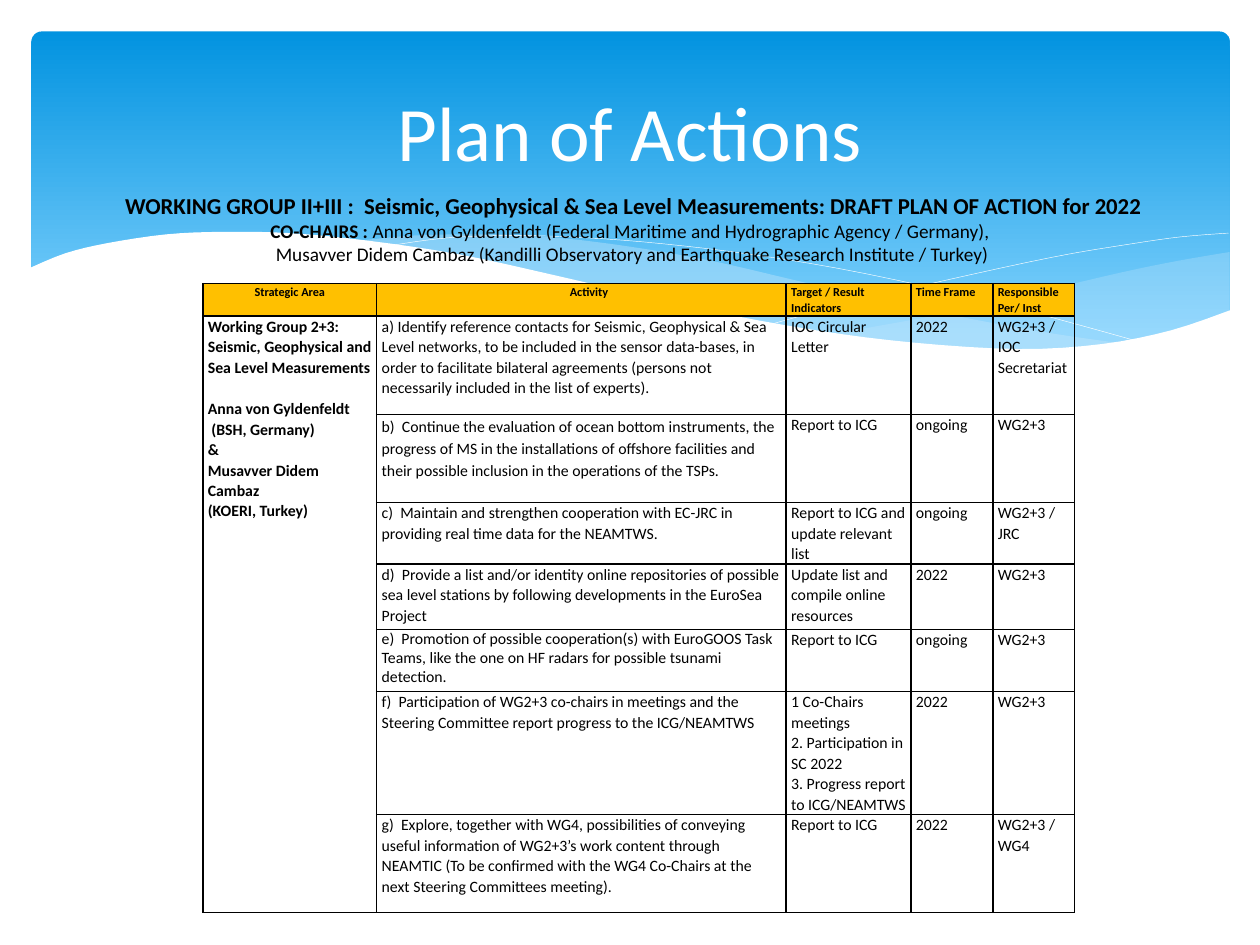
from pptx import Presentation
from pptx.dml.color import RGBColor
from pptx.enum.shapes import MSO_SHAPE
from pptx.enum.text import MSO_ANCHOR, PP_ALIGN
from pptx.oxml.ns import qn
from pptx.util import Inches, Pt
from lxml.etree import SubElement

INK = {"sky": "0293E0", "pale": "83D3FE", "mist": "C6E7FC",
       "white": "FFFFFF", "black": "000000", "gold": "FFC000"}
FONT = "Calibri"

# Wave edges as key points in inches, joined by smooth curves
BASE = [(9.77, 2.46), (9.3, 2.62), (8.75, 2.73), (8.09, 2.77), (7.26, 2.72),
        (6.47, 2.62), (5.55, 2.45), (4.47, 2.2), (3.65, 2.02), (2.92, 1.91),
        (2.3, 1.85), (1.77, 1.84), (1.32, 1.86), (0.85, 1.93), (0.52, 2.01),
        (0.23, 2.13)]
RIGHT_TOP = [(9.76, 2), (9.35, 2.07), (8.91, 2.16), (8.32, 2.3), (7.79, 2.43),
             (7.29, 2.53), (6.61, 2.65)]
RIGHT_LOW = [(6.61, 2.65), (7.05, 2.71), (7.57, 2.76), (8.03, 2.78),
             (8.54, 2.76), (9.05, 2.69), (9.42, 2.59), (9.76, 2.47)]
MID_TOP = [(8.93, 2.73), (8.37, 2.65), (7.75, 2.54), (7.06, 2.4), (6.29, 2.22),
           (5.69, 2.08), (5.14, 1.98), (4.64, 1.91), (4.2, 1.87), (3.8, 1.86),
           (3.28, 1.87), (2.86, 1.91)]
MID_LOW = [(2.86, 1.91), (3.42, 1.99), (4.04, 2.11), (4.91, 2.32),
           (5.66, 2.48), (6.34, 2.61), (6.95, 2.7), (7.48, 2.76), (8.07, 2.79),
           (8.57, 2.77), (8.93, 2.73)]
LONG = [(3.09, 1.95), (3.53, 1.89), (4.01, 1.87), (4.5, 1.88), (5.1, 1.92),
        (5.82, 2), (6.65, 2.13), (7.6, 2.33), (8.31, 2.51), (9.07, 2.72)]
SHORT = [(6.13, 2.57), (6.72, 2.41), (7.48, 2.23), (8.36, 2.04), (8.95, 1.94),
         (9.37, 1.88), (9.75, 1.85)]

COLS = [1.38, 3.25, 0.99, 0.65, 0.65]
ROWS = [0.26, 0.78, 0.7, 0.39, 0.52, 0.49, 0.88, 0.78]
HEADS = ["Strategic Area", "Activity", "Target / Result Indicators",
         "Time Frame", "Responsible Per/ Inst"]
GROUP = ["Working Group 2+3:", "Seismic, Geophysical and ",
         "Sea Level Measurements", "Anna von Gyldenfeldt", " (BSH, Germany)",
         "&", "Musavver Didem Cambaz", "(KOERI, Turkey)"]
TASKS = [
    ("a) Identify reference contacts for Seismic, Geophysical & Sea Level "
     "networks, to be included in the sensor data-bases, in order to "
     "facilitate bilateral agreements (persons not necessarily included in "
     "the list of experts).",
     "IOC Circular Letter", "2022", "WG2+3 / IOC Secretariat"),
    ("b)  Continue the evaluation of ocean bottom instruments, the progress "
     "of MS in the installations of offshore facilities and their possible "
     "inclusion in the operations of the TSPs.",
     "Report to ICG", "ongoing", "WG2+3"),
    ("c)  Maintain and strengthen cooperation with EC-JRC in providing real "
     "time data for the NEAMTWS.",
     "Report to ICG and update relevant list", "ongoing", "WG2+3 / JRC"),
    ("d)  Provide a list and/or identity online repositories of possible sea "
     "level stations by following developments in the EuroSea Project",
     "Update list and compile online resources", "2022", "WG2+3"),
    ("e)  Promotion of possible cooperation(s) with EuroGOOS Task Teams, like "
     "the one on HF radars for possible tsunami detection.",
     "Report to ICG", "ongoing", "WG2+3"),
    ("f)  Participation of WG2+3 co-chairs in meetings and the Steering "
     "Committee report progress to the ICG/NEAMTWS",
     "1 Co-Chairs meetings\n2. Participation in SC 2022\n"
     "3. Progress report to ICG/NEAMTWS", "2022", "WG2+3"),
    ("g)  Explore, together with WG4, possibilities of conveying useful "
     "information of WG2+3’s work content through NEAMTIC (To be confirmed "
     "with the WG4 Co-Chairs at the next Steering Committees meeting).",
     "Report to ICG", "2022", "WG2+3 / WG4"),
]
SPACING = {2: 1.15, 5: 1.0}  # line spacing of activities that differ


def rgb(name):
    return RGBColor.from_string(INK[name])


def curve(keys, steps=4):
    """Points of a Catmull-Rom curve through the keys."""
    ends = [keys[0], *keys, keys[-1]]
    out = []
    for a, b, c, d in zip(ends, ends[1:], ends[2:], ends[3:]):
        for t in (i / steps for i in range(steps)):
            out.append(tuple(
                (2 * q + (r - p) * t + (2 * p - 5 * q + 4 * r - s) * t ** 2
                 + (3 * q - p - 3 * r + s) * t ** 3) / 2
                for p, q, r, s in zip(a, b, c, d)))
    return out + [keys[-1]]


def add_path(slide, pts, close):
    """Outline in whole EMU, as the builder rounds its points."""
    first, *rest = [(Inches(x), Inches(y)) for x, y in pts]
    form = slide.shapes.build_freeform(*first, scale=1.0)
    form.add_line_segments(rest, close=close)
    shape = form.convert_to_shape()
    shape.shadow.inherit = False
    return shape


def add_wave(slide, pts, color, alpha=100):
    wave = add_path(slide, pts, True)
    wave.fill.solid()
    wave.fill.fore_color.rgb = rgb(color)
    wave.line.fill.background()
    tint = wave.fill._xPr.find(qn("a:solidFill"))[0]
    SubElement(tint, qn("a:alpha"), val=str(alpha * 1000))


def add_crest(slide, pts):
    crest = add_path(slide, pts, False)
    crest.fill.background()
    crest.line.color.rgb = rgb("white")
    crest.line.width = Pt(0.25)


def add_sky(slide):
    box = [Inches(v) for v in (0.25, 0.25, 9.51, 2.7)]
    sky = slide.shapes.add_shape(MSO_SHAPE.ROUNDED_RECTANGLE, *box)
    sky.adjustments[0] = 0.03
    sky.shadow.inherit = False
    sky.line.fill.background()
    sky.fill.gradient()
    sky.fill.gradient_angle = 270
    for stop, color, at in zip(sky.fill.gradient_stops, ("sky", "pale"), (0, 0.9)):
        stop.color.rgb, stop.position = rgb(color), at


def add_run(para, text, size, bold=False, color="black"):
    run = para.add_run()
    run.text = text
    run.font.name, run.font.size, run.font.bold = FONT, Pt(size), bold
    run.font.color.rgb = rgb(color)


def add_lines(frame, lines, align=PP_ALIGN.CENTER):
    """One paragraph for each list of (text, size, bold) runs."""
    for i, runs in enumerate(lines):
        para = frame.add_paragraph() if i else frame.paragraphs[0]
        para.alignment = align
        for run in runs:
            add_run(para, *run)


def set_title(slide):
    title = slide.shapes.title
    slide.shapes._spTree.append(title._element)  # in front of the waves
    title.left, title.top, title.width, title.height = (
        Inches(v) for v in (0.5, 0.35, 9, 1.37))
    title.text_frame.vertical_anchor = MSO_ANCHOR.MIDDLE
    add_lines(title.text_frame, [[("Plan of Actions", 44, False, "white")]])


def fill_cell(cell, text, size=9, bold=False, align=PP_ALIGN.LEFT, space=1.07,
              fill=None):
    cell.margin_left = cell.margin_right = Inches(0.04)
    cell.margin_top = cell.margin_bottom = 0
    add_lines(cell.text_frame, [[(t, size, bold)] for t in text.split("\n")], align)
    for para in cell.text_frame.paragraphs:
        para.line_spacing = space
    props = cell._tc.get_or_add_tcPr()
    for side in "LRTB":
        edge = SubElement(props, qn(f"a:ln{side}"), w=str(Pt(1)))
        paint = SubElement(edge, qn("a:solidFill"))
        SubElement(paint, qn("a:srgbClr"), val=INK["black"])
    if fill:
        cell.fill.solid()
        cell.fill.fore_color.rgb = rgb(fill)
    else:
        cell.fill.background()


def add_plan(slide):
    box = [Inches(v) for v in (1.61, 2.25, sum(COLS), sum(ROWS))]
    plan = slide.shapes.add_table(len(ROWS), len(COLS), *box).table
    plan.first_row = plan.horz_banding = False
    for col, width in zip(plan.columns, COLS):
        col.width = Inches(width)
    for row, height in zip(plan.rows, ROWS):
        row.height = Inches(height)
    for c, head in enumerate(HEADS):
        align = PP_ALIGN.CENTER if c < 2 else PP_ALIGN.LEFT
        fill_cell(plan.cell(0, c), head, 7, True, align, fill="gold")
    indent = plan.cell(0, 1).text_frame.paragraphs[0]._p.get_or_add_pPr()
    indent.set("marL", str(Inches(0.32)))
    indent.set("indent", str(Inches(-0.2)))
    for r, task in enumerate(TASKS, 1):
        fill_cell(plan.cell(r, 0), "\n".join(GROUP) if r == 1 else "", bold=True)
        for c, text in enumerate(task, 1):
            space = SPACING.get(r, 1.07) if c == 1 else 1.07
            fill_cell(plan.cell(r, c), text, space=space)
    area = plan.cell(1, 0)
    area.merge(plan.cell(len(TASKS), 0))
    area.text_frame.paragraphs[3].space_before = Pt(11.75)


def add_chairs(slide):
    box = [Inches(v) for v in (0.83, 1.47, 8.38, 0.99)]
    frame = slide.shapes.add_textbox(*box).text_frame
    frame.word_wrap = False
    add_lines(frame, [
        [("WORKING GROUP II+III :  Seismic, Geophysical & Sea Level "
          "Measurements: DRAFT PLAN OF ACTION for 2022", 13, True)],
        [("CO-CHAIRS : ", 11, True),
         ("Anna von Gyldenfeldt (Federal Maritime and Hydrographic Agency / "
          "Germany), ", 11)],
        [("Musavver Didem Cambaz (Kandilli Observatory and Earthquake Research "
          "Institute / Turkey)", 11)]])


def main():
    deck = Presentation()
    deck.slide_width, deck.slide_height = Inches(10), Inches(7.5)
    slide = deck.slides.add_slide(deck.slide_layouts[5])
    add_sky(slide)
    add_wave(slide, curve(RIGHT_TOP) + curve(RIGHT_LOW), "mist", 29)
    add_wave(slide, curve(MID_TOP) + curve(MID_LOW), "mist", 40)
    add_crest(slide, curve(LONG))
    add_crest(slide, curve(SHORT))
    add_wave(slide, curve(BASE) + [(0.23, 3.29), (9.77, 3.29)], "white")
    set_title(slide)
    add_plan(slide)
    add_chairs(slide)
    deck.save("out.pptx")


if __name__ == "__main__":
    main()
